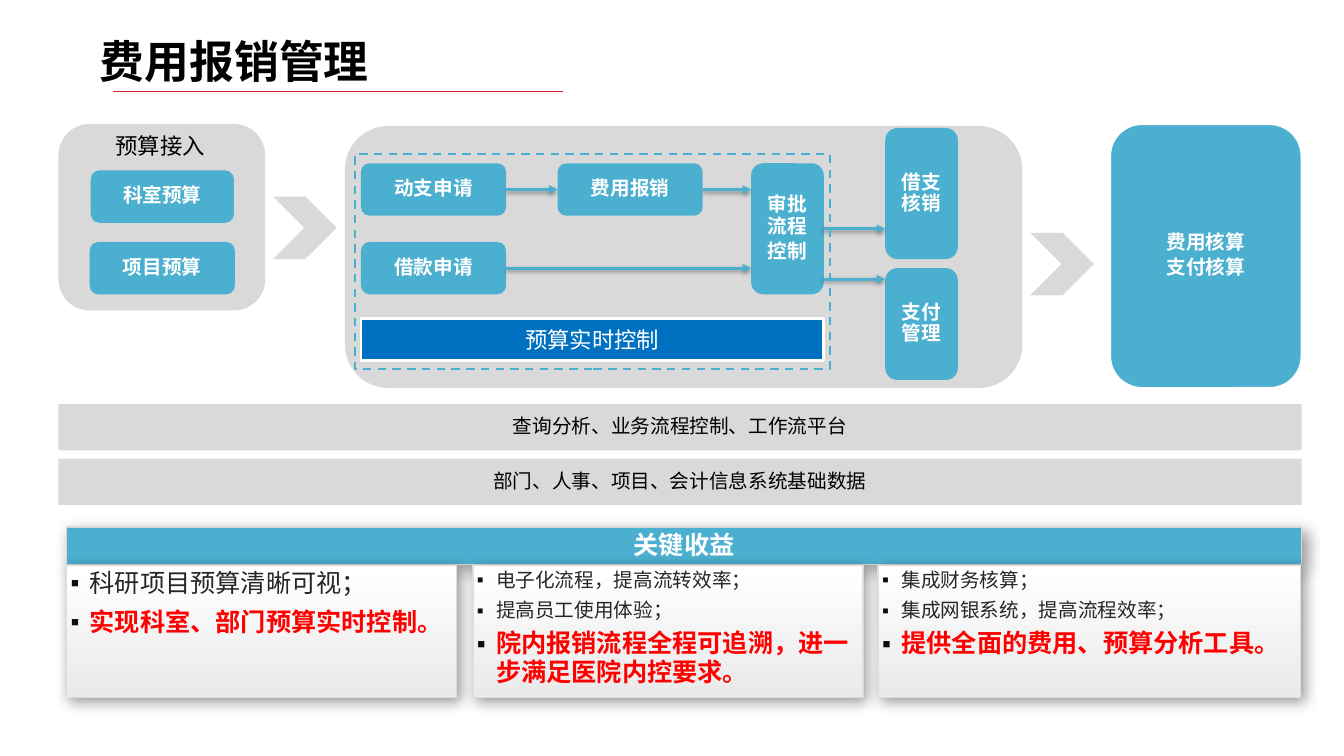
from lxml.etree import SubElement
from pptx import Presentation
from pptx.dml.color import RGBColor
from pptx.enum.dml import MSO_LINE_DASH_STYLE as Dash
from pptx.enum.shapes import MSO_CONNECTOR as Link, MSO_SHAPE as Kind
from pptx.enum.text import MSO_ANCHOR as Anchor, PP_ALIGN as Align
from pptx.oxml.ns import qn
from pptx.util import Inches, Pt

FONT = "Noto Sans CJK SC"
BLUE, GREY, WHITE, BLACK = "4BB0D0", "D9D9D9", "FFFFFF", "000000"
DARK, RED = "262626", "FF0000"


def paint(target, color):
    if hasattr(target, "solid"):
        target.solid()
        target = target.fore_color
    target.rgb = RGBColor.from_string(color)


def write(frame, text, size=14, color=WHITE, bold=False, align=Align.CENTER,
          lines=0.9, before=0, after=0, bullet=None):
    for row in text.split("\n"):
        first = not frame.text
        par = frame.paragraphs[0] if first else frame.add_paragraph()
        if bullet:
            prop = par._p.get_or_add_pPr()
            prop.set("marL", str(Inches(0.19)))
            prop.set("indent", str(-Inches(0.19)))
            tint = SubElement(prop, qn("a:buClr"))
            SubElement(tint, qn("a:srgbClr"), val="0D0D0D")
            SubElement(prop, qn("a:buFont"), typeface="Arial")
            SubElement(prop, qn("a:buChar"), char=bullet)
        par.alignment = align
        par.line_spacing = lines
        par.space_before = Pt(0 if first else before)
        par.space_after = Pt(after)
        run = par.add_run()
        run.text = row
        font = run.font
        font.size, font.bold, font.name = Pt(size), bold, FONT
        paint(font.fill, color)
        SubElement(run._r.get_or_add_rPr(), qn("a:ea"), typeface=FONT)


def inset(frame, side, top):
    frame.margin_left = frame.margin_right = Inches(side)
    frame.margin_top = frame.margin_bottom = Inches(top)


def shade(props, alpha, blur, dist, angle):
    effect = props.find(qn("a:effectLst"))
    if effect is None:
        effect = SubElement(props, qn("a:effectLst"))
    outer = SubElement(effect, qn("a:outerShdw"), blurRad=str(Pt(blur)),
                       dist=str(Pt(dist)), dir=str(angle * 60000), rotWithShape="0")
    tint = SubElement(outer, qn("a:srgbClr"), val=BLACK)
    SubElement(tint, qn("a:alpha"), val=str(alpha * 1000))


def block(slide, kind, x, y, w, h, fill=None, edge=None, width=1):
    shape = slide.shapes.add_shape(kind, Inches(x), Inches(y), Inches(w), Inches(h))
    shape.shadow.inherit = False
    if fill:
        paint(shape.fill, fill)
    else:
        shape.fill.background()
    if edge:
        paint(shape.line.fill, edge)
        shape.line.width = Pt(width)
    else:
        shape.line.fill.background()
    frame = shape.text_frame
    frame.word_wrap = True
    frame.vertical_anchor = Anchor.MIDDLE
    inset(frame, 0.1, 0.05)
    return shape


def step(slide, text, x, y, w=1.44, h=0.52, edge=None):
    shape = block(slide, Kind.ROUNDED_RECTANGLE, x, y, w, h, BLUE, edge, 1.5)
    write(shape.text_frame, text, bold=True, before=2.8)
    return shape


def rule(slide, x, y, end, color, width):
    line = slide.shapes.add_connector(Link.STRAIGHT, Inches(x), Inches(y),
                                      Inches(end), Inches(y))
    paint(line.line.fill, color)
    line.line.width = Pt(width)
    SubElement(line._element.spPr, qn("a:effectLst"))
    return line


def arrow(slide, x, y, end, start=None, goal=None):
    line = rule(slide, x, y, end, BLUE, 2)
    SubElement(line.line._get_or_add_ln(), qn("a:tailEnd"), type="triangle")
    shade(line._element.spPr, 38, 3.1, 1.6, 90)
    if start:
        line.begin_connect(start, 3)
    if goal:
        line.end_connect(goal, 1)


def gain(slide, x, w, size, plain, key):
    card = block(slide, Kind.RECTANGLE, x, 5.61, w, 1.31, WHITE, "DDDDDD")
    card.fill.gradient()
    card.fill.gradient_angle = 270
    for stop, place, color in zip(card.fill.gradient_stops, (0, 1), (WHITE, "EAEAEA")):
        stop.position = place
        paint(stop.color, color)
    shade(card._element.spPr, 40, 10, 3, 45)
    frame = card.text_frame
    frame.vertical_anchor = Anchor.TOP
    inset(frame, 0.04, 0.04)
    look = dict(align=Align.LEFT, lines=0.95, bullet="▪")
    write(frame, plain, size=size, color=DARK, after=size * 0.4, **look)
    write(frame, key, size=18, color=RED, bold=True, after=7.2, **look)


def head(slide):
    title = slide.shapes.title
    title.left, title.top = Inches(0.89), Inches(0.28)
    title.width, title.height = Inches(12), Inches(0.64)
    frame = title.text_frame
    frame.vertical_anchor = Anchor.MIDDLE
    inset(frame, 0.1, 0.05)
    write(frame, "费用报销管理", size=32, color=BLACK, bold=True,
          align=Align.LEFT, lines=1)
    rule(slide, 1.12, 0.91, 5.58, "CA2820", 1)


def flow(slide):
    block(slide, Kind.ROUNDED_RECTANGLE, 3.42, 1.25, 6.72, 2.6, GREY)
    block(slide, Kind.ROUNDED_RECTANGLE, 0.58, 1.23, 2.05, 1.85, GREY)
    label = slide.shapes.add_textbox(Inches(1.04), Inches(1.29), Inches(1.1), Inches(0.34))
    label.text_frame.word_wrap = False
    label.text_frame.vertical_anchor = Anchor.MIDDLE
    write(label.text_frame, "预算接入", size=16, color=BLACK)
    step(slide, "科室预算", 0.9, 1.69, 1.42)
    step(slide, "项目预算", 0.89, 2.4)
    for x, y in ((2.71, 1.95), (10.22, 2.31)):
        block(slide, Kind.CHEVRON, x, y, 0.63, 0.62, GREY)

    spend = step(slide, "动支申请", 3.58, 1.62)
    loan = step(slide, "借款申请", 3.58, 2.4)
    claim = step(slide, "费用报销", 5.53, 1.62)
    check = step(slide, "审批流程\n控制", 7.45, 1.62, 0.72, 1.3)
    step(slide, "借支核销", 8.78, 1.27, 0.72, 1.3)
    step(slide, "支付管理", 8.78, 2.66, 0.72, 1.11)
    step(slide, "费用核算\n支付核算", 11.01, 1.23, 1.9, 2.62, WHITE)

    control = block(slide, Kind.RECTANGLE, 3.58, 3.16, 4.59, 0.42, "0070C0", WHITE, 2)
    control.text_frame.word_wrap = False
    write(control.text_frame, "预算实时控制", size=16, lines=1)

    arrow(slide, 5.02, 1.88, 5.53, spend, claim)
    arrow(slide, 6.97, 1.88, 7.45, claim)
    arrow(slide, 5.02, 2.66, 7.45, loan)
    arrow(slide, 8.17, 2.27, 8.78, check)
    arrow(slide, 8.17, 2.77, 8.78)
    zone = block(slide, Kind.RECTANGLE, 3.52, 1.53, 4.71, 2.13, edge=BLUE, width=1.5)
    zone.line.dash_style = Dash.DASH


def base(slide):
    rows = ("查询分析、业务流程控制、工作流平台", "部门、人事、项目、会计信息系统基础数据")
    for row, text in enumerate(rows):
        bar = block(slide, Kind.RECTANGLE, 0.58, 4.01 + row * 0.54, 12.33, 0.46, GREY)
        write(bar.text_frame, text, color=BLACK)


def gains(slide):
    bar = block(slide, Kind.RECTANGLE, 0.66, 5.23, 12.25, 0.37, BLUE, GREY)
    shade(bar._element.spPr, 40, 10, 3, 45)
    inset(bar.text_frame, 0.04, 0.04)
    write(bar.text_frame, "关键收益", size=18, bold=True, lines=0.95)
    gain(slide, 0.66, 3.87, 18, "科研项目预算清晰可视；", "实现科室、部门预算实时控制。")
    gain(slide, 4.69, 3.87, 14, "电子化流程，提高流转效率；\n提高员工使用体验；",
         "院内报销流程全程可追溯，进一步满足医院内控要求。")
    gain(slide, 8.71, 4.19, 14, "集成财务核算；\n集成网银系统，提高流程效率；",
         "提供全面的费用、预算分析工具。")


def main():
    deck = Presentation()
    deck.slide_width, deck.slide_height = Inches(13.33), Inches(7.5)
    slide = deck.slides.add_slide(deck.slide_layouts[5])
    head(slide)
    flow(slide)
    base(slide)
    gains(slide)
    deck.save("out.pptx")


if __name__ == "__main__":
    main()
